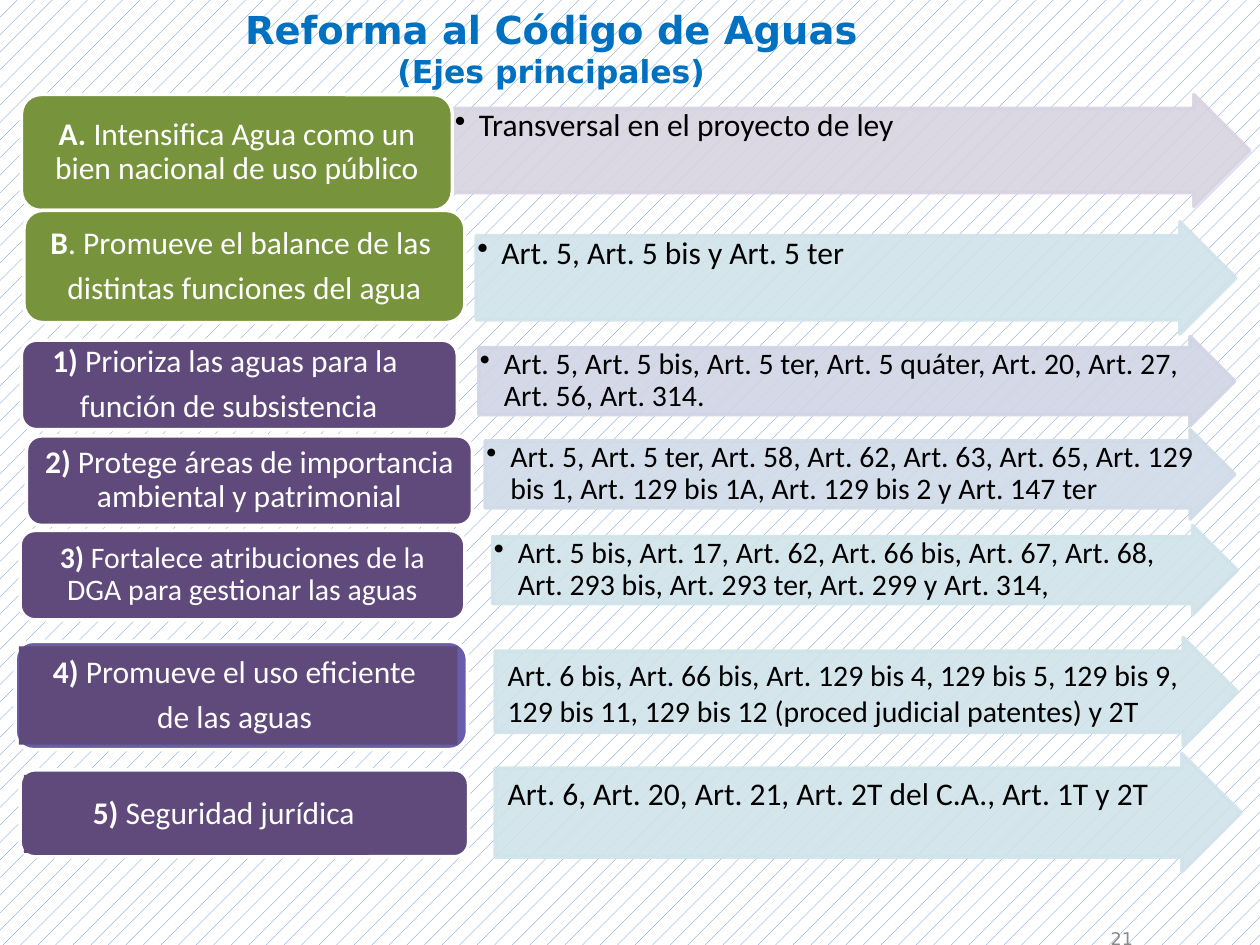
import pptx
import pptx.util
import pptx.dml.color
import pptx.enum.dml
import pptx.enum.shapes
import pptx.enum.text
import pptx.oxml
import pptx.oxml.ns

COLORS = {
    "title": "0070C0", "number": "898989", "white": "FFFFFF", "black": "000000",
    "hatch": "4F81BD", "green": "77933C", "purple": "604A7B", "violet": "685DAB",
    "lilac": "D8D3E0", "aqua": "D0E3EA", "lavender": "D1D4E5", "mist": "D0DBE8",
}
HEAD_FONT, BODY_FONT = "DejaVu Sans", "Calibri"
COLUMNS, ROWS = 100, 75

Pt = pptx.util.Pt
SHAPE = pptx.enum.shapes.MSO_SHAPE
ALIGN = pptx.enum.text.PP_ALIGN
ANCHOR = pptx.enum.text.MSO_ANCHOR


def rgb(name):
    return pptx.dml.color.RGBColor.from_string(COLORS[name])


def sub(parent, tag, **attributes):
    el = pptx.oxml.parse_xml(f"<{tag} {pptx.oxml.ns.nsdecls('a')}/>")
    for key, value in attributes.items():
        el.set(key, value)
    parent.append(el)


def write(p, text, size=18, color="black", font=BODY_FONT, bold=False):
    r = p.add_run()
    r.text = text
    r.font.size, r.font.name, r.font.bold = Pt(size), font, bold
    r.font.color.rgb = rgb(color)


class Deck:
    """Holds the grid, the style and the current slide."""

    def __init__(self):
        self.prs = pptx.Presentation()
        self.prs.slide_width = pptx.util.Inches(10)
        self.prs.slide_height = pptx.util.Inches(7.5)
        self.cell = self.prs.slide_width / COLUMNS
        self.row = self.prs.slide_height / ROWS
        self.s = self.prs.slides.add_slide(self.prs.slide_layouts[6])

    def background(self):
        fill = self.s.background.fill
        fill.patterned()
        fill.pattern = pptx.enum.dml.MSO_PATTERN.PERCENT_5
        fill.fore_color.rgb, fill.back_color.rgb = rgb("hatch"), rgb("white")

    def place(self, box):
        x, y, w, h = box
        return [round(v) for v in (x * self.cell, y * self.row, w * self.cell, h * self.row)]

    def frame(self, sp, anchor=ANCHOR.TOP, insets=(1, 0.5, 1, 0.5)):
        """Set wrap, anchor and insets (left, top, right, bottom in grid units)."""
        tf = sp.text_frame
        tf.word_wrap, tf.vertical_anchor = True, anchor
        sides = [round(v * self.cell) for v in insets]
        tf.margin_left, tf.margin_top, tf.margin_right, tf.margin_bottom = sides
        return tf

    def text(self, box, lines, align, anchor=ANCHOR.TOP, **style):
        tf = self.frame(self.s.shapes.add_textbox(*self.place(box)), anchor)
        for i, (line, size) in enumerate(lines):
            p = tf.add_paragraph() if i else tf.paragraphs[0]
            p.alignment = align
            write(p, line, size=size, font=HEAD_FONT, **style)

    def shape(self, kind, box, fill, line=None):
        sp = self.s.shapes.add_shape(kind, *self.place(box))
        sp.shadow.inherit = False
        sp.fill.solid()
        sp.fill.fore_color.rgb = rgb(fill)
        if line:
            sp.line.color.rgb, sp.line.width = rgb(line), Pt(2)
        else:
            sp.line.fill.background()
        return sp

    def arrow(self, box, color, text, size, bullet):
        sp = self.shape(SHAPE.RIGHT_ARROW, box, color, color)
        sp.adjustments[0], sp.adjustments[1] = 0.75, 0.5
        for el in sp._element.spPr.iter(pptx.oxml.ns.qn("a:srgbClr")):
            sub(el, "a:alpha", val="90000")
        tf = self.frame(sp, insets=(0.1,) * 4 if bullet else (1, 0.5, 1, 0.5))
        p = tf.paragraphs[0]
        p.alignment = ALIGN.LEFT
        if bullet:
            p.line_spacing = 0.9
            pPr = p._p.get_or_add_pPr()
            indent = round(1.9 * self.cell)
            pPr.set("marL", str(indent))
            pPr.set("indent", str(-indent))
            sub(pPr, "a:buChar", char="•")
        write(p, text, size=size)

    def label(self, box, fill, lead, lines, size=18, panel=None, trim=0):
        """Rounded label; panel is an inner rectangle that takes the text."""
        sp = self.shape(SHAPE.ROUNDED_RECTANGLE, box, fill, "white")
        if panel:
            sp = self.shape(SHAPE.RECTANGLE, panel, "purple")
        tf = self.frame(sp, ANCHOR.MIDDLE, (0.7, 0.4, 0.7 + trim, 0.4))
        for i, line in enumerate(lines):
            p = tf.add_paragraph() if i else tf.paragraphs[0]
            p.alignment, p.line_spacing = ALIGN.CENTER, 0.9
            p.space_after = Pt(0.35 * size)
            if i == 0:
                write(p, lead, size=size, color="white", bold=True)
            write(p, line, size=size, color="white")


# arrow box, colour, text, size, bullet
ARROWS = [
    ((36, 7.5, 63.2, 8.9), "lilac", "Transversal en el proyecto de ley", 18, True),
    ((37.8, 17.6, 60.3, 8.9), "aqua", "Art. 5, Art. 5 bis y Art. 5 ter", 18, True),
    ((38, 26.7, 60, 7.1), "lavender", "Art. 5, Art. 5 bis, Art. 5 ter, Art. 5 quáter, Art. 20, "
     "Art. 27, Art. 56, Art. 314.", 17, True),
    ((38.5, 34.1, 59.5, 7.1), "mist", "Art. 5, Art. 5 ter, Art. 58, Art. 62, Art. 63, Art. 65, "
     "Art. 129 bis 1, Art. 129 bis 1A, Art. 129 bis 2 y Art. 147 ter", 17, True),
    ((39.1, 41.7, 59.1, 7.1), "aqua", "Art. 5 bis, Art. 17, Art. 62, Art. 66 bis, Art. 67, "
     "Art. 68, Art. 293 bis, Art. 293 ter, Art. 299 y Art. 314,", 17, True),
    ((39.3, 50.6, 58.9, 8.6), "aqua", "Art. 6 bis, Art. 66 bis, Art. 129 bis 4, 129 bis 5, "
     "129 bis 9, 129 bis 11, 129 bis 12 (proced judicial patentes) y 2T", 17, False),
    ((39.3, 59.8, 59.2, 9.4), "aqua", "Art. 6, Art. 20, Art. 21, Art. 2T del C.A., "
     "Art. 1T y 2T", 18, False),
]
# label box, colour, bold lead, lines, further options
LABELS = [
    ((1.7, 7.5, 34.2, 9.2), "green", "A. ",
     ["Intensifica Agua como un bien nacional de uso público"], {}),
    ((1.9, 16.7, 35, 8.9), "green", "B",
     [". Promueve el balance de las ", "distintas funciones del agua"], {}),
    ((1.7, 27, 34.6, 7.1), "purple", "1) ",
     ["Prioriza las aguas para la ", "función de subsistencia"], {"trim": 1.7}),
    ((2.1, 34.6, 35.4, 7.1), "purple", "2) ",
     ["Protege áreas de importancia ambiental y patrimonial"], {}),
    ((1.6, 42.1, 35.3, 7.1), "purple", "3) ",
     ["Fortalece atribuciones de la DGA para gestionar las aguas"], {"size": 17}),
    ((1.2, 50.9, 35.9, 8.6), "violet", "4) ",
     ["Promueve el uso eficiente ", "de las aguas "], {"panel": (1.5, 51.3, 34.8, 7.8)}),
    ((1.6, 61.1, 35.6, 6.9), "purple", "5) ",
     ["Seguridad jurídica "], {"panel": (1.9, 61.5, 32.3, 6.2)}),
]


def main():
    deck = Deck()
    deck.background()
    deck.text((67.6, 73.4, 23.3, 2.1), [("21", 10)], ALIGN.RIGHT, ANCHOR.MIDDLE, color="number")
    deck.text((-3.5, 0, 94.5, 7.7),
              [("Reforma al Código de Aguas", 22), ("(Ejes principales)", 18)],
              ALIGN.CENTER, color="title", bold=True)
    for arrow in ARROWS:
        deck.arrow(*arrow)
    for *label, options in LABELS:
        deck.label(*label, **options)
    deck.prs.save("out.pptx")


if __name__ == "__main__":
    main()
